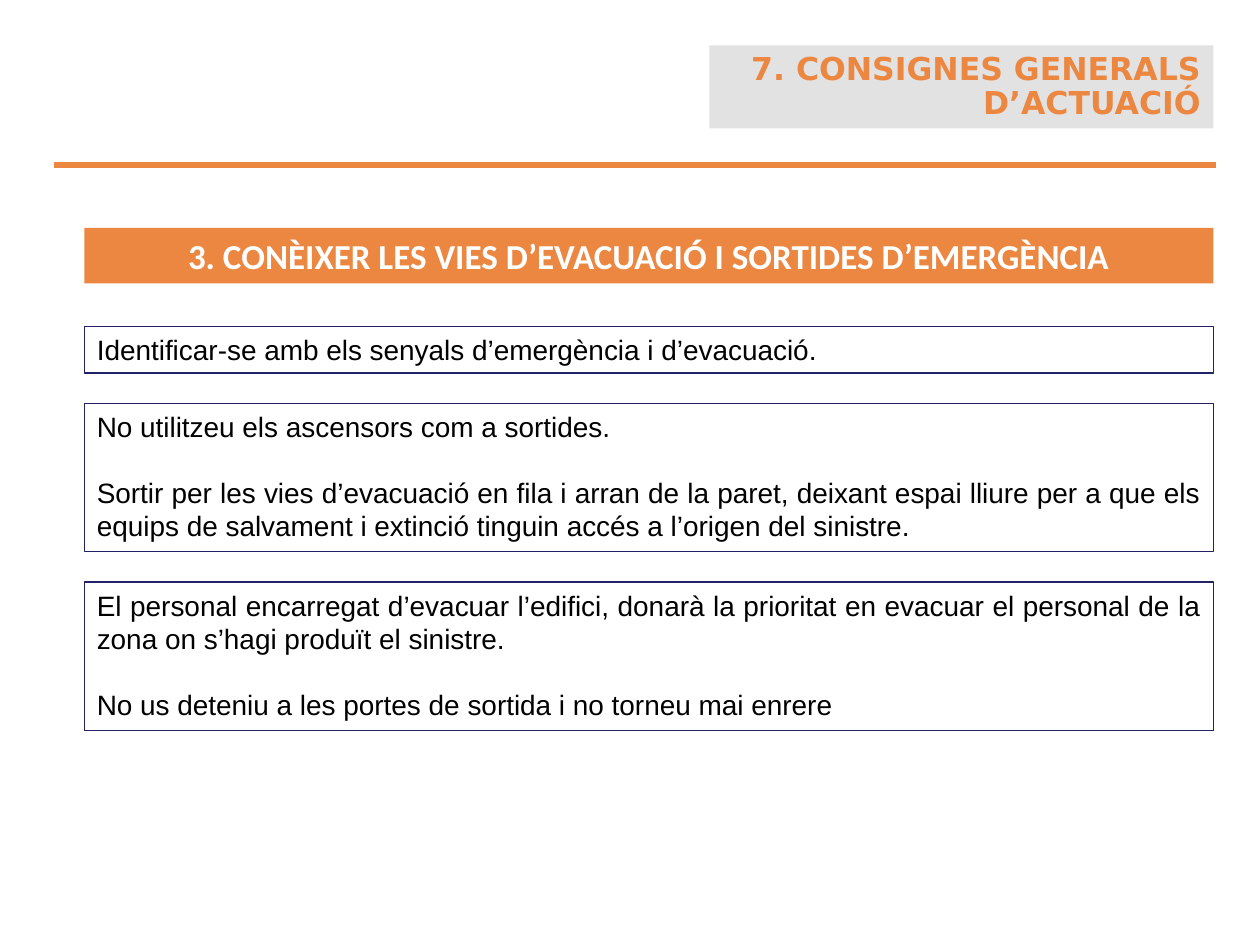
from pptx import Presentation
from pptx.dml.color import RGBColor
from pptx.enum.shapes import MSO_CONNECTOR, MSO_SHAPE
from pptx.enum.text import MSO_ANCHOR, MSO_AUTO_SIZE, PP_ALIGN
from pptx.oxml.ns import qn
from pptx.util import Inches, Pt
from lxml import etree

STRAIGHT = MSO_CONNECTOR.STRAIGHT
RECTANGLE = MSO_SHAPE.RECTANGLE
MIDDLE, TOP = MSO_ANCHOR.MIDDLE, MSO_ANCHOR.TOP
LEFT, CENTER = PP_ALIGN.LEFT, PP_ALIGN.CENTER
RIGHT, JUSTIFY = PP_ALIGN.RIGHT, PP_ALIGN.JUSTIFY
NO_AUTO_SIZE = MSO_AUTO_SIZE.NONE

ORANGE, GREY, NAVY = "EC8741", "E2E2E2", "222267"
WHITE, BLACK = "FFFFFF", "000000"
CONTENT_LEFT, CONTENT_WIDTH = 0.67, 8.96
PARAGRAPH_GAP = 18.4

INSTRUCTIONS = [
    (2.59, 0.37, LEFT, [
        "Identificar-se amb els senyals d’emergència i d’evacuació.",
    ]),
    (3.2, 1.18, JUSTIFY, [
        "No utilitzeu els ascensors com a sortides.",
        "Sortir per les vies d’evacuació en fila i arran de la paret, deixant "
        "espai lliure per a que els equips de salvament i extinció tinguin "
        "accés a l’origen del sinistre.",
    ]),
    (4.62, 1.18, JUSTIFY, [
        "El personal encarregat d’evacuar l’edifici, donarà la prioritat en "
        "evacuar el personal de la zona on s’hagi produït el sinistre.",
        "No us deteniu a les portes de sortida i no torneu mai enrere",
    ]),
]


def color(value):
    return RGBColor.from_string(value)


def fill_shape(shape, value):
    shape.fill.solid()
    shape.fill.fore_color.rgb = color(value)


def write_text(shape, lines, font, size, value, align, bold=False, anchor=TOP):
    frame = shape.text_frame
    frame.text = "\n".join(lines)
    frame.word_wrap = True
    frame.auto_size = NO_AUTO_SIZE
    frame.vertical_anchor = anchor
    frame.margin_left = frame.margin_right = Inches(0.1)
    frame.margin_top = frame.margin_bottom = Inches(0.05)
    for index, para in enumerate(frame.paragraphs):
        para.alignment = align
        para.space_before = Pt(PARAGRAPH_GAP if index else 0)
        for span in para.runs:
            span.font.name = font
            span.font.size = Pt(size)
            span.font.bold = bold
            span.font.color.rgb = color(value)


def add_box(page, left, top, width, height):
    box = page.shapes.add_shape(
        RECTANGLE, Inches(left), Inches(top), Inches(width), Inches(height))
    box.shadow.inherit = False
    return box


def add_rule(page, left, right, top):
    rule = page.shapes.add_connector(
        STRAIGHT, Inches(left), Inches(top), Inches(right), Inches(top))
    rule.line.color.rgb = color(ORANGE)
    rule.line.width = Pt(3)
    properties = rule._element.find(qn("p:spPr"))
    etree.SubElement(properties, qn("a:effectLst"))


def place_title(page, left, top, width, height):
    title = page.shapes.title
    title.left, title.top = Inches(left), Inches(top)
    title.width, title.height = Inches(width), Inches(height)
    fill_shape(title, GREY)
    write_text(title, ["7. CONSIGNES GENERALS D’ACTUACIÓ"],
               "DejaVu Sans", 18, ORANGE, RIGHT, bold=True, anchor=MIDDLE)
    title.text_frame.paragraphs[0].line_spacing = 0.9


def add_section_bar(page, left, top, width, height):
    bar = add_box(page, left, top, width, height)
    fill_shape(bar, ORANGE)
    bar.line.fill.background()
    write_text(bar, ["3. CONÈIXER LES VIES D’EVACUACIÓ I SORTIDES D’EMERGÈNCIA"],
               "Calibri", 20, WHITE, CENTER, bold=True)


def add_instruction(page, left, top, width, height, align, lines):
    box = add_box(page, left, top, width, height)
    box.fill.background()
    box.line.color.rgb = color(NAVY)
    box.line.width = Pt(0.75)
    write_text(box, lines, "Arial", 16, BLACK, align)


def main():
    deck = Presentation()
    deck.slide_width, deck.slide_height = Inches(10), Inches(7.5)
    page = deck.slides.add_slide(deck.slide_layouts.get_by_name("Title Only"))
    add_rule(page, 0.43, 9.65, 1.31)
    place_title(page, 5.63, 0.36, 4, 0.66)
    add_section_bar(page, CONTENT_LEFT, 1.81, CONTENT_WIDTH, 0.44)
    for top, height, align, lines in INSTRUCTIONS:
        add_instruction(page, CONTENT_LEFT, top, CONTENT_WIDTH, height, align, lines)
    deck.save("out.pptx")


if __name__ == "__main__":
    main()
